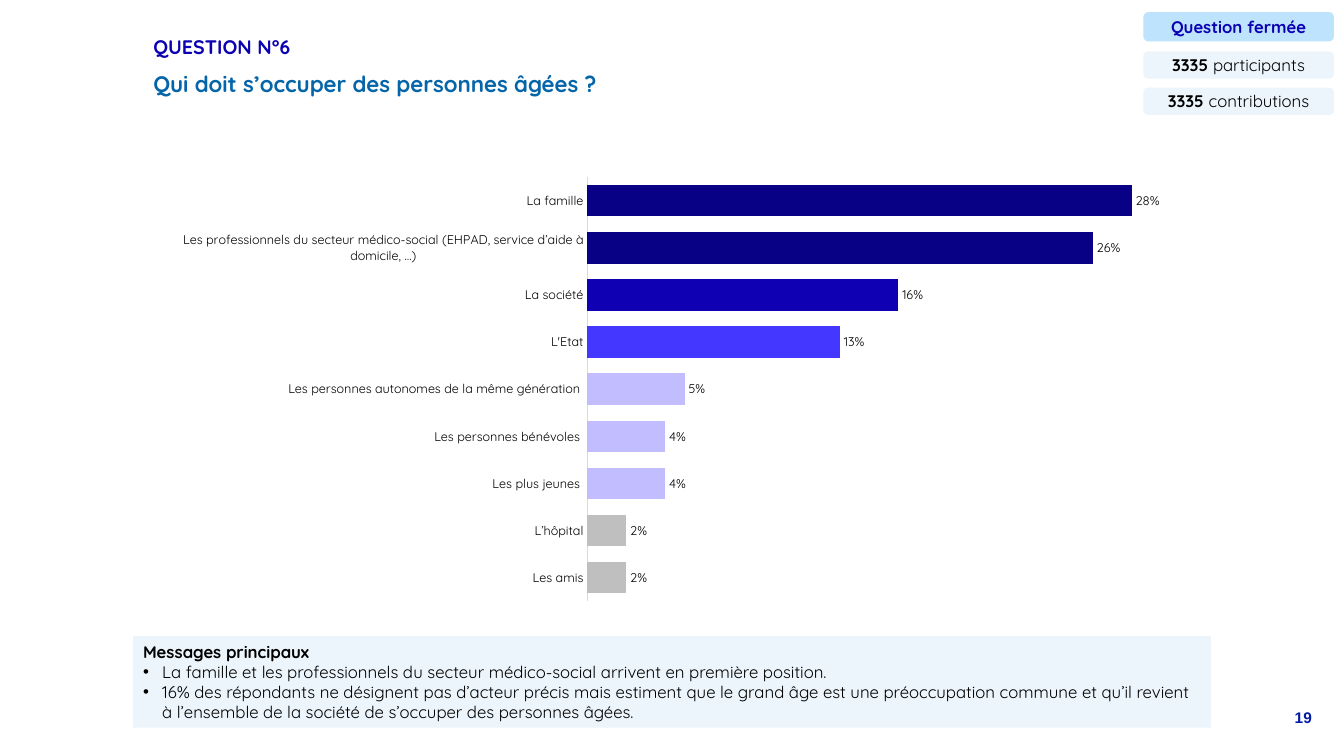
from dataclasses import dataclass

from pptx import Presentation
from pptx.chart.data import CategoryChartData
from pptx.dml.color import RGBColor
from pptx.enum.chart import XL_CHART_TYPE, XL_LABEL_POSITION, XL_TICK_MARK
from pptx.enum.shapes import MSO_SHAPE
from pptx.enum.text import MSO_ANCHOR, MSO_AUTO_SIZE, PP_ALIGN
from pptx.oxml import parse_xml
from pptx.oxml.ns import nsdecls
from pptx.util import Inches, Pt

BAR, OUTSIDE, NO_TICK = XL_CHART_TYPE.BAR_CLUSTERED, XL_LABEL_POSITION.OUTSIDE_END, XL_TICK_MARK.NONE
RECT, ROUNDED = MSO_SHAPE.RECTANGLE, MSO_SHAPE.ROUNDED_RECTANGLE
MIDDLE, TOP, NO_FIT = MSO_ANCHOR.MIDDLE, MSO_ANCHOR.TOP, MSO_AUTO_SIZE.NONE
LEFT, CENTER, RIGHT = PP_ALIGN.LEFT, PP_ALIGN.CENTER, PP_ALIGN.RIGHT


@dataclass(frozen=True)
class Theme:
    """Colours, fonts and type sizes of the slide."""
    font: str = "Quicksand"
    number_font: str = "Arial"
    black: str = "000000"
    blue: str = "0B00B2"
    question: str = "0465A9"
    number: str = "011CA3"
    pale: str = "ECF5FB"
    sky: str = "BDE3FD"
    axis: str = "D9D9D9"
    navy: str = "080085"
    royal: str = "0F00B3"
    violet: str = "4437FF"
    lilac: str = "C1BDFF"
    grey: str = "BFBFBF"
    question_size: int = 16
    title_size: int = 14
    text_size: int = 12
    number_size: int = 11
    chart_size: int = 9


T = Theme()

TITLE = "QUESTION N°6"
QUESTION = "Qui doit s’occuper des personnes âgées ?"
PAGE = "19"
BADGES = [
    (0.12, 0.29, T.sky, T.blue, [("Question fermée", True)]),
    (0.51, 0.27, T.pale, T.black, [("3335 ", True), ("participants", False)]),
    (0.87, 0.27, T.pale, T.black, [("3335 ", True), ("contributions", False)]),
]
ANSWERS = [
    ("La famille", 0.28, T.navy),
    ("Les professionnels du secteur médico-social (EHPAD, service d’aide à domicile, …)", 0.26, T.navy),
    ("La société", 0.16, T.royal),
    ("L'Etat", 0.13, T.violet),
    ("Les personnes autonomes de la même génération ", 0.05, T.lilac),
    ("Les personnes bénévoles ", 0.04, T.lilac),
    ("Les plus jeunes ", 0.04, T.lilac),
    ("L’hôpital", 0.02, T.grey),
    ("Les amis", 0.02, T.grey),
]
MESSAGES_HEAD = "Messages principaux"
MESSAGES = [
    "La famille et les professionnels du secteur médico-social arrivent en première position.",
    "16% des répondants ne désignent pas d’acteur précis mais estiment que le grand âge est une "
    "préoccupation commune et qu’il revient à l’ensemble de la société de s’occuper des personnes âgées.",
]
PLOT = {"x": 0.404, "y": 0.07, "w": 0.576, "h": 0.897}


def style_font(font, size, color=T.black, name=T.font, bold=False):
    """Set size, colour, typeface and weight of a font."""
    font.size, font.name, font.bold = Pt(size), name, bold
    font.color.rgb = RGBColor.from_string(color)


def write(sp, paragraphs, size=T.text_size, color=T.black, font=T.font, align=LEFT,
          anchor=MIDDLE, spacing=1.0, bullets_from=None):
    """Fill a shape with paragraphs, each a list of (text, bold) runs."""
    tf = sp.text_frame
    tf.word_wrap, tf.auto_size, tf.vertical_anchor = True, NO_FIT, anchor
    for i, runs in enumerate(paragraphs):
        p = tf.paragraphs[0] if i == 0 else tf.add_paragraph()
        bullet = bullets_from is not None and i >= bullets_from
        pPr = p._p.get_or_add_pPr()
        indent = Inches(0.19) if bullet else 0
        pPr.set("marL", str(indent))
        pPr.set("indent", str(-indent))
        if bullet:
            pPr.append(parse_xml(f'<a:buFont {nsdecls("a")} typeface="Arial"/>'))
            pPr.append(parse_xml(f'<a:buChar {nsdecls("a")} char="•"/>'))
        else:
            pPr.append(parse_xml(f'<a:buNone {nsdecls("a")}/>'))
        p.alignment, p.line_spacing, p.space_before = align, spacing, Pt(0)
        for text, bold in runs:
            r = p.add_run()
            r.text = text
            style_font(r.font, size, color, font, bold)


def place(sp, left, top, width, height):
    """Move and size a shape in inches."""
    sp.left, sp.top, sp.width, sp.height = map(Inches, (left, top, width, height))
    return sp


def add_panel(slide, kind, box, fill):
    """Add a flat filled shape without outline."""
    sp = slide.shapes.add_shape(kind, *map(Inches, box))
    sp.shadow.inherit = False
    sp.fill.solid()
    sp.fill.fore_color.rgb = RGBColor.from_string(fill)
    sp.line.fill.background()
    return sp


def add_answers_chart(slide):
    """Add the bar chart of answers."""
    data = CategoryChartData(number_format="0%")
    data.categories = [name for name, _, _ in ANSWERS]
    data.add_series("Réponses", [value for _, value, _ in ANSWERS])
    box = map(Inches, (1.77, 1.43, 10.04, 4.69))
    chart = slide.shapes.add_chart(BAR, *box, data).chart
    chart.has_legend = chart.has_title = False
    style_font(chart.font, T.chart_size)

    axis = chart.category_axis
    axis.reverse_order = True
    axis.major_tick_mark = axis.minor_tick_mark = NO_TICK
    axis.format.line.color.rgb = RGBColor.from_string(T.axis)
    axis.format.line.width = Pt(0.75)
    style_font(axis.tick_labels.font, T.chart_size)

    values = chart.value_axis
    values.minimum_scale, values.maximum_scale = 0, 0.3
    values.has_major_gridlines = values.visible = False

    plot = chart.plots[0]
    plot.gap_width, plot.vary_by_categories = 50, False
    series = plot.series[0]
    series.invert_if_negative = False
    for i, (_, _, color) in enumerate(ANSWERS):
        fill = series.points[i].format.fill
        fill.solid()
        fill.fore_color.rgb = RGBColor.from_string(color)
    labels = series.data_labels
    labels.show_value, labels.position = True, OUTSIDE
    labels.number_format, labels.number_format_is_linked = "0%", False
    style_font(labels.font, T.chart_size)

    area = chart.element.xpath("c:chart/c:plotArea")[0]
    for old in area.xpath("c:layout"):
        area.remove(old)
    modes = '<c:xMode val="edge"/><c:yMode val="edge"/>'
    sizes = "".join(f'<c:{key} val="{value}"/>' for key, value in PLOT.items())
    area.insert(0, parse_xml(
        f'<c:layout {nsdecls("c")}><c:manualLayout><c:layoutTarget val="inner"/>'
        f'{modes}{sizes}</c:manualLayout></c:layout>'))


def main():
    """Build the slide and save it."""
    prs = Presentation()
    prs.slide_width, prs.slide_height = Inches(13.33), Inches(7.5)
    slide = prs.slides.add_slide(prs.slide_layouts[1])

    title = place(slide.shapes.title, 1.42, 0.34, 11.5, 0.27)
    write(title, [[(TITLE, True)]], size=T.title_size, color=T.blue, spacing=0.9)
    question = place(slide.placeholders[1], 1.42, 0.69, 9.72, 0.31)
    write(question, [[(QUESTION, True)]], size=T.question_size, color=T.question, spacing=0.9)

    for top, height, fill, color, runs in BADGES:
        badge = add_panel(slide, ROUNDED, (11.34, top, 1.89, height), fill)
        write(badge, [runs], color=color, align=CENTER)

    add_answers_chart(slide)

    panel = add_panel(slide, RECT, (1.32, 6.31, 10.69, 0.91), T.pale)
    write(panel, [[(MESSAGES_HEAD, True)]] + [[(text, False)] for text in MESSAGES], bullets_from=1)

    number = slide.shapes.add_textbox(*map(Inches, (11.14, 6.98, 1.97, 0.52)))
    write(number, [[(PAGE, True)]], size=T.number_size, color=T.number, font=T.number_font,
          align=RIGHT, anchor=TOP)
    prs.save("out.pptx")


if __name__ == "__main__":
    main()
